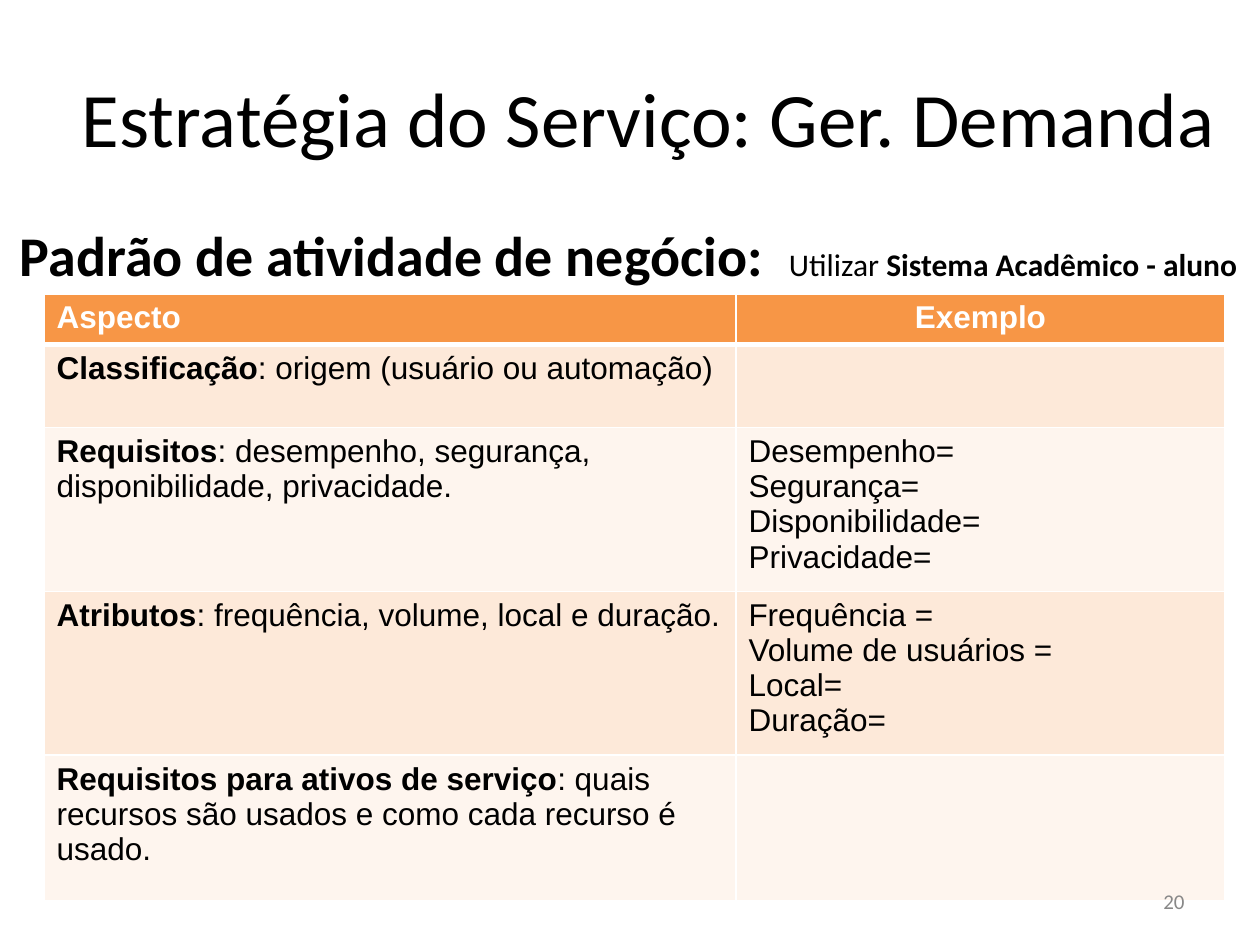
from dataclasses import dataclass

from lxml.etree import SubElement
from pptx import Presentation
from pptx.dml.color import RGBColor
from pptx.enum.text import MSO_ANCHOR, MSO_AUTO_SIZE, PP_ALIGN
from pptx.oxml import parse_xml
from pptx.oxml.ns import nsdecls, qn
from pptx.util import Emu, Pt

SCALE = 914400 / 126  # EMU per px

BLACK = RGBColor(0x00, 0x00, 0x00)
WHITE = RGBColor(0xFF, 0xFF, 0xFF)
GRAY = RGBColor(0x88, 0x88, 0x88)
ORANGE = RGBColor(0xF7, 0x96, 0x46)
PEACH = RGBColor(0xFD, 0xE9, 0xD9)
CREAM = RGBColor(0xFE, 0xF5, 0xEE)


@dataclass(frozen=True)
class Span:
    text: str
    size: int = 18
    font: str = "Arial"
    color: RGBColor = BLACK
    bold: bool = False


@dataclass(frozen=True)
class Aspect:
    name: str
    detail: str
    examples: tuple[str, ...]
    height: int


ASPECTS = [
    Aspect("Classificação", ": origem (usuário ou automação)", (), 83),
    Aspect("Requisitos", ": desempenho, segurança, disponibilidade, privacidade.",
           ("Desempenho=", "Segurança=", "Disponibilidade=", "Privacidade="), 155),
    Aspect("Atributos", ": frequência, volume, local e duração.",
           ("Frequência =", "Volume de usuários =", "Local=", "Duração="), 155),
    Aspect("Requisitos para ativos de serviço",
           ": quais recursos são usados e como cada recurso é usado.", (), 146),
]
COLUMN_WIDTHS = (692, 489)
HEADER_HEIGHT = 48


def px(length: int) -> Emu:
    return Emu(round(length * SCALE))


def write_paragraph(para, spans: list[Span], align=PP_ALIGN.LEFT) -> None:
    para.alignment = align
    for span in spans:
        run = para.add_run()
        run.text = span.text
        run.font.size = Pt(span.size)
        run.font.name = span.font
        run.font.bold = span.bold
        run.font.color.rgb = span.color


def add_text(page, left: int, top: int, width: int, height: int):
    box = page.shapes.add_textbox(px(left), px(top), px(width), px(height))
    box.text_frame.word_wrap = True
    return box.text_frame


def style_cell(cell, fill: RGBColor, top: int, bottom: int) -> None:
    """Fill a cell and give it white borders, widths in points."""
    cell.fill.solid()
    cell.fill.fore_color.rgb = fill
    properties = cell._tc.get_or_add_tcPr()
    edges = {"lnL": 1, "lnR": 1, "lnT": top, "lnB": bottom}
    for index, (edge, width) in enumerate(edges.items()):
        properties.insert(index, parse_xml(
            f'<a:{edge} {nsdecls("a")} w="{Pt(width)}"><a:solidFill>'
            f'<a:srgbClr val="{WHITE}"/></a:solidFill></a:{edge}>'))


def fill_cell(cell, lines: list[list[Span]], align=PP_ALIGN.LEFT) -> None:
    frame = cell.text_frame
    for index, spans in enumerate(lines):
        para = frame.add_paragraph() if index else frame.paragraphs[0]
        write_paragraph(para, spans, align)


def add_aspect_table(page) -> None:
    heights = [HEADER_HEIGHT] + [aspect.height for aspect in ASPECTS]
    table = page.shapes.add_table(
        len(heights), len(COLUMN_WIDTHS), px(44), px(294),
        px(sum(COLUMN_WIDTHS)), px(sum(heights))).table
    for column, width in zip(table.columns, COLUMN_WIDTHS):
        column.width = px(width)
    for row, height in zip(table.rows, heights):
        row.height = px(height)

    headings = (("Aspecto", PP_ALIGN.LEFT), ("Exemplo", PP_ALIGN.CENTER))
    for column, (heading, align) in enumerate(headings):
        cell = table.cell(0, column)
        style_cell(cell, ORANGE, 1, 3)
        fill_cell(cell, [[Span(heading, color=WHITE, bold=True)]], align)

    for row, aspect in enumerate(ASPECTS, start=1):
        for column in range(len(COLUMN_WIDTHS)):
            style_cell(table.cell(row, column), PEACH if row % 2 else CREAM,
                       3 if row == 1 else 1, 1)
        fill_cell(table.cell(row, 0),
                  [[Span(aspect.name, bold=True), Span(aspect.detail)]])
        fill_cell(table.cell(row, 1), [[Span(line)] for line in aspect.examples])


def main() -> None:
    deck = Presentation()
    deck.slide_width, deck.slide_height = px(1260), px(945)
    page = deck.slides.add_slide(deck.slide_layouts[5])

    # Title
    title = page.shapes.title
    title.left, title.top, title.width, title.height = px(63), px(38), px(1172), px(158)
    title.text_frame.auto_size = MSO_AUTO_SIZE.NONE
    title.text_frame.vertical_anchor = MSO_ANCHOR.MIDDLE
    write_paragraph(title.text_frame.paragraphs[0],
                    [Span("Estratégia do Serviço: Ger. Demanda", 44, "Calibri")],
                    PP_ALIGN.CENTER)

    # Subtitle, with a tab stop before the side remark
    frame = add_text(page, 0, 214, 1290, 80)
    frame.margin_left = px(20)
    para = frame.paragraphs[0]
    tabs = SubElement(para._p.get_or_add_pPr(), qn("a:tabLst"))
    SubElement(tabs, qn("a:tab"), pos=str(px(769)), algn="l")
    write_paragraph(para, [
        Span("Padrão de atividade de negócio:\t", 32, "Calibri", bold=True),
        Span("Utilizar ", 18, "Calibri"),
        Span("Sistema Acadêmico - aluno", 18, "Calibri", bold=True),
    ])

    add_aspect_table(page)

    # Page number
    frame = add_text(page, 903, 876, 294, 50)
    frame.vertical_anchor = MSO_ANCHOR.MIDDLE
    write_paragraph(frame.paragraphs[0], [Span("20", 12, "Calibri", GRAY)],
                    PP_ALIGN.RIGHT)

    deck.save("out.pptx")


if __name__ == "__main__":
    main()
